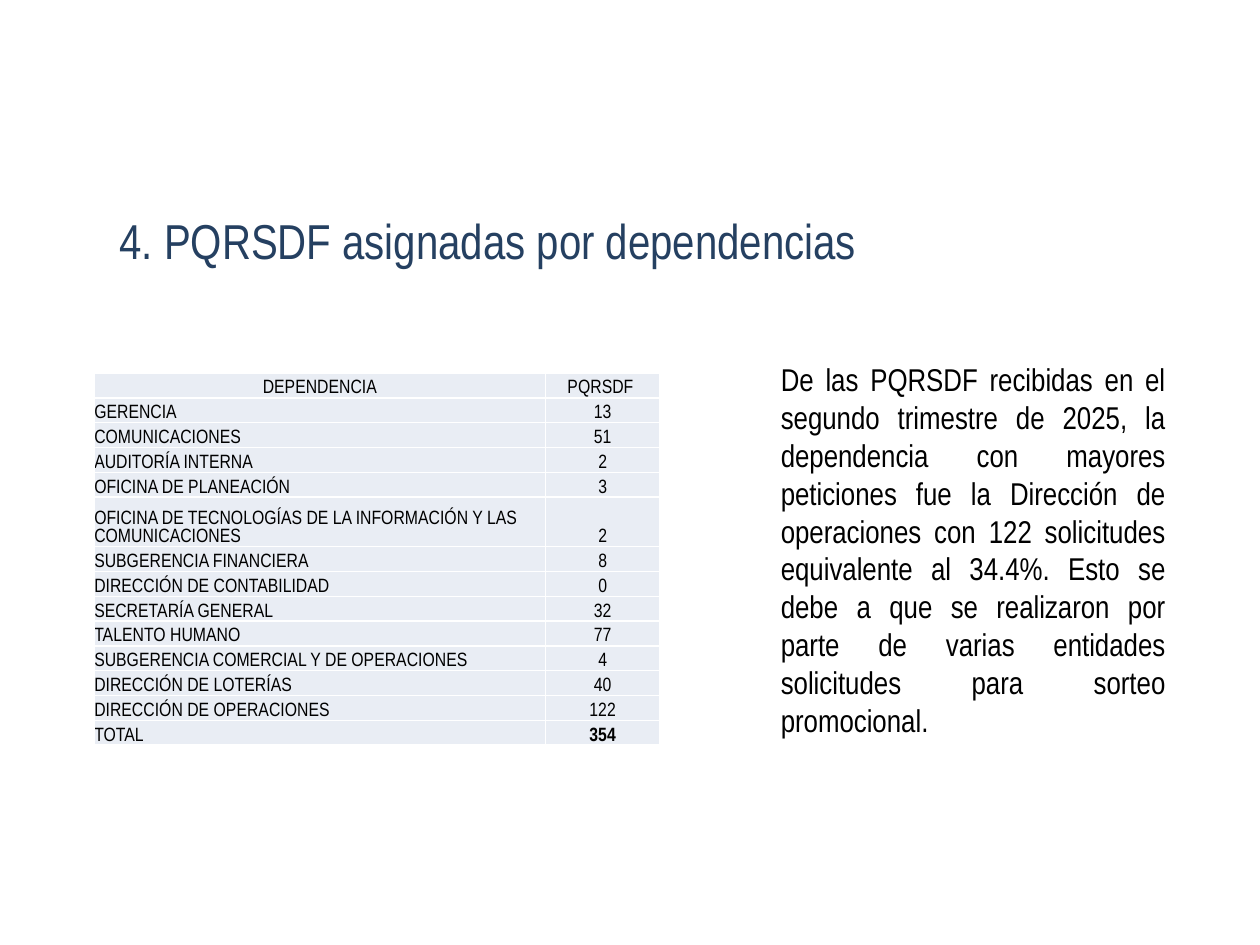
import pptx
import pptx.dml.color
import pptx.enum.text
import pptx.oxml
import pptx.oxml.ns
import pptx.util

Cm = pptx.util.Cm
Pt = pptx.util.Pt
ALIGN = pptx.enum.text.PP_ALIGN

ROWS = [
    ("DEPENDENCIA", "PQRSDF "),
    ("GERENCIA", "13"),
    ("COMUNICACIONES", "51"),
    ("AUDITORÍA INTERNA", "2"),
    ("OFICINA DE PLANEACIÓN", "3"),
    ("OFICINA DE TECNOLOGÍAS DE LA INFORMACIÓN Y LAS COMUNICACIONES", "2"),
    ("SUBGERENCIA FINANCIERA", "8"),
    ("DIRECCIÓN DE CONTABILIDAD", "0"),
    ("SECRETARÍA GENERAL", "32"),
    ("TALENTO HUMANO", "77"),
    ("SUBGERENCIA COMERCIAL Y DE OPERACIONES", "4"),
    ("DIRECCIÓN DE LOTERÍAS", "40"),
    ("DIRECCIÓN DE OPERACIONES", "122"),
    ("TOTAL", "354"),
]
TALL_ROW = 5
SUMMARY = (
    "De las PQRSDF recibidas en el segundo trimestre de 2025, la dependencia con "
    "mayores peticiones fue la Dirección de operaciones con 122 solicitudes "
    "equivalente al 34.4%. Esto se debe a que se realizaron por parte de varias "
    "entidades solicitudes para sorteo promocional."
)


def color(value):
    return pptx.dml.color.RGBColor.from_string(value)


def line_xml(tag, value, width):
    namespace = pptx.oxml.ns.nsdecls("a")
    return pptx.oxml.parse_xml(
        f'<a:{tag} {namespace} w="{Pt(width)}"><a:solidFill>'
        f'<a:srgbClr val="{value}"/></a:solidFill></a:{tag}>'
    )


def write_text(frame, text, *, font, size, fill="000000", bold=False,
               align=ALIGN.LEFT, level=0, spacing=None, outline=None):
    paragraph = frame.paragraphs[0]
    paragraph.alignment = align
    paragraph.level = level
    paragraph.line_spacing = spacing
    run = paragraph.add_run()
    run.text = text
    run.font.name = font
    run.font.size = Pt(size)
    run.font.bold = bold
    run.font.color.rgb = color(fill)
    if outline:
        run.font._element.insert(0, line_xml("ln", outline, 0.75))


class SlideBuilder:
    """Hold the style and the current slide, and add each kind of element."""

    font = "Arial Narrow"
    navy = "254061"
    cell_fill = "E9EDF4"
    border = "FFFFFF"

    def __init__(self, slide):
        self.slide = slide

    def text_box(self, text, left, top, width, height, **text_format):
        shape = self.slide.shapes.add_textbox(Cm(left), Cm(top), Cm(width), Cm(height))
        shape.text_frame.word_wrap = True
        write_text(shape.text_frame, text, font=self.font, **text_format)

    def table(self, rows, left, top, widths, row_height, tall_row):
        shape = self.slide.shapes.add_table(
            len(rows), len(widths), Cm(left), Cm(top),
            Cm(sum(widths)), Cm(row_height * (len(rows) + 1)),
        )
        table = shape.table
        table.first_row = table.horz_banding = False
        for column, width in zip(table.columns, widths):
            column.width = Cm(width)
        for index, values in enumerate(rows):
            table.rows[index].height = Cm(row_height * (2 if index == tall_row else 1))
            for column, text in enumerate(values):
                centred = index == 0 or column == 1
                self.cell(
                    table.cell(index, column), text,
                    align=ALIGN.CENTER if centred else ALIGN.LEFT,
                    bold=index == len(rows) - 1 and column == 1,
                )

    def cell(self, cell, text, **text_format):
        cell.margin_left = cell.margin_right = cell.margin_top = cell.margin_bottom = 0
        cell.vertical_anchor = pptx.enum.text.MSO_ANCHOR.BOTTOM
        properties = cell._tc.get_or_add_tcPr()
        for side in ("lnL", "lnR", "lnT", "lnB"):
            properties.append(line_xml(side, self.border, 1))
        cell.fill.solid()
        cell.fill.fore_color.rgb = color(self.cell_fill)
        write_text(cell.text_frame, text, font=self.font, size=11, **text_format)


def main():
    presentation = pptx.Presentation()
    presentation.slide_width = Cm(25.4)
    presentation.slide_height = Cm(19.05)
    builder = SlideBuilder(presentation.slides.add_slide(presentation.slide_layouts[6]))
    builder.text_box("4. PQRSDF asignadas por dependencias", 0.89, 3.53, 17.65, 1.83,
                     size=28, fill=builder.navy, level=1, spacing=1.5,
                     outline=builder.navy)
    builder.text_box(SUMMARY, 15.49, 7.14, 8.26, 7.95, size=18, align=ALIGN.JUSTIFY)
    builder.table(ROWS, 1.9, 7.52, (9.1, 2.3), 0.5, TALL_ROW)
    presentation.save("out.pptx")


if __name__ == "__main__":
    main()
